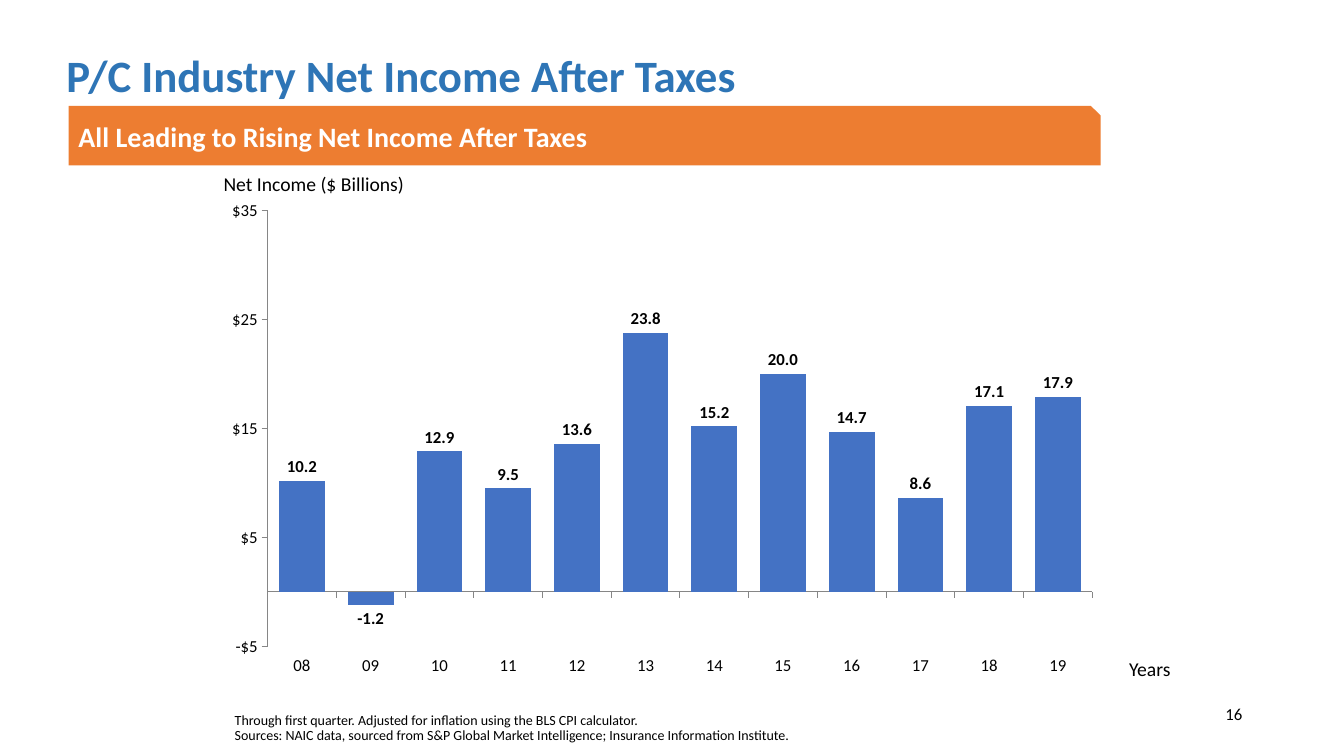
"""Build the slide on property and casualty industry net income after taxes."""
from typing import NamedTuple

from lxml.etree import SubElement
from pptx import Presentation
from pptx.chart.data import CategoryChartData
from pptx.dml.color import RGBColor
from pptx.enum.chart import XL_CHART_TYPE as ChartType
from pptx.enum.chart import XL_LABEL_POSITION as LabelPosition
from pptx.enum.chart import XL_TICK_LABEL_POSITION as TickLabels
from pptx.enum.chart import XL_TICK_MARK as TickMark
from pptx.enum.shapes import MSO_SHAPE as Preset
from pptx.enum.text import MSO_ANCHOR as Anchor
from pptx.enum.text import PP_ALIGN as Align
from pptx.oxml.ns import qn
from pptx.util import Inches, Pt

BLACK = RGBColor(0x00, 0x00, 0x00)
WHITE = RGBColor(0xFF, 0xFF, 0xFF)
TITLE_BLUE = RGBColor(0x2E, 0x75, 0xB6)
BAR_BLUE = RGBColor(0x44, 0x72, 0xC4)
ORANGE = RGBColor(0xED, 0x7D, 0x31)
AXIS_GRAY = RGBColor(0x86, 0x86, 0x86)

FONT = "Calibri"
SLIDE_WIDTH = Inches(13.33)
SLIDE_HEIGHT = Inches(7.5)
FIRST_YEAR = 8
NET_INCOME = (10.2, -1.2, 12.9, 9.5, 13.6, 23.8, 15.2, 20.0, 14.7, 8.6, 17.1, 17.9)
PLOT_SHARES = {"x": 0.05, "y": 0.02, "w": 0.92, "h": 0.87}


class Area(NamedTuple):
    """A rectangle in percent of the slide's width and height."""

    left: float
    top: float
    width: float
    height: float

    def place(self) -> tuple[int, int, int, int]:
        """Return the rectangle in slide units."""
        return (
            round(SLIDE_WIDTH * self.left / 100),
            round(SLIDE_HEIGHT * self.top / 100),
            round(SLIDE_WIDTH * self.width / 100),
            round(SLIDE_HEIGHT * self.height / 100),
        )


class Label(NamedTuple):
    """A piece of text with its area and format."""

    text: str
    area: Area
    size: int
    color: RGBColor = BLACK
    bold: bool = False
    anchor: Anchor = Anchor.MIDDLE
    align: Align = Align.LEFT
    margin: float = 0.05


TITLE = Label("P/C Industry Net Income After Taxes", Area(4.2, 3.33, 92.5, 13.87),
              32, TITLE_BLUE, bold=True)
BANNER = Label("All Leading to Rising Net Income After Taxes",
               Area(5.1, 14, 76.8, 7.87), 20, WHITE, bold=True)
CHART_AREA = Area(16.58, 26.53, 66.69, 66.27)
LABELS = (
    TITLE,
    Label("Through first quarter. Adjusted for inflation using the BLS CPI calculator.\n"
          "Sources: NAIC data, sourced from S&P Global Market Intelligence; "
          "Insurance Information Institute.",
          Area(16.73, 92.4, 69.4, 6), 10, anchor=Anchor.BOTTOM, margin=0),
    Label("Net Income ($ Billions)", Area(15.9, 22.4, 21.68, 4.13), 14),
    Label("16", Area(70.67, 92.67, 22.5, 5.33), 12, anchor=Anchor.TOP, align=Align.RIGHT),
    Label("Years", Area(83.27, 86.53, 8.63, 4.13), 14),
)


def write(shape, text: str, *, size: int, color: RGBColor, bold: bool,
          anchor: Anchor, align: Align, margin: float) -> None:
    """Fill a shape with formatted text, one paragraph per line."""
    frame = shape.text_frame
    frame.word_wrap = True
    frame.vertical_anchor = anchor
    frame.margin_left = frame.margin_right = Inches(0.1)
    frame.margin_top = frame.margin_bottom = Inches(margin)
    frame.text = text
    for para in frame.paragraphs:
        para.alignment = align
        para.line_spacing = 0.9
        for span in para.runs:
            span.font.name = FONT
            span.font.size = Pt(size)
            span.font.bold = bold
            span.font.color.rgb = color


def write_label(shape, label: Label) -> None:
    """Write a label into a shape."""
    write(shape, label.text, size=label.size, color=label.color, bold=label.bold,
          anchor=label.anchor, align=label.align, margin=label.margin)


def add_banner(page, label: Label) -> None:
    """Draw the orange banner with one snipped corner."""
    banner = page.shapes.add_shape(Preset.SNIP_1_RECTANGLE, *label.area.place())
    banner.shadow.inherit = False
    banner.fill.solid()
    banner.fill.fore_color.rgb = ORANGE
    banner.line.fill.background()
    write_label(banner, label)


def fix_plot_area(chart) -> None:
    """Set the inner plot area as shares of the chart's size."""
    plot_area = chart._chartSpace.chart.plotArea
    layout = plot_area.find(qn("c:layout"))
    if layout is None:
        layout = SubElement(plot_area, qn("c:layout"))
        plot_area.insert(0, layout)
    manual = SubElement(layout, qn("c:manualLayout"))
    settings = {"layoutTarget": "inner", "xMode": "edge", "yMode": "edge", **PLOT_SHARES}
    for name, value in settings.items():
        SubElement(manual, qn(f"c:{name}")).set("val", str(value))


def add_income_chart(page, area: Area) -> None:
    """Draw the column chart of net income by year."""
    data = CategoryChartData(number_format="0.0")
    data.categories = [f"{FIRST_YEAR + step:02d}" for step in range(len(NET_INCOME))]
    data.add_series("Net Income", NET_INCOME)
    chart = page.shapes.add_chart(ChartType.COLUMN_CLUSTERED, *area.place(), data).chart
    chart.has_legend = False
    chart.has_title = False
    chart.font.name = FONT
    chart.font.size = Pt(12)
    chart.font.color.rgb = BLACK
    fix_plot_area(chart)

    for axis in (chart.category_axis, chart.value_axis):
        axis.has_major_gridlines = False
        axis.major_tick_mark = TickMark.OUTSIDE
        axis.minor_tick_mark = TickMark.NONE
        axis.format.line.color.rgb = AXIS_GRAY
        axis.format.line.width = Pt(0.75)
    chart.category_axis.tick_label_position = TickLabels.LOW
    income_axis = chart.value_axis
    income_axis.minimum_scale = -5
    income_axis.maximum_scale = 35
    income_axis.major_unit = 10
    income_axis.tick_labels.number_format = '"$"#,##0'
    income_axis.tick_labels.number_format_is_linked = False

    plot = chart.plots[0]
    plot.gap_width = 50
    plot.vary_by_categories = False
    bars = plot.series[0]
    bars.invert_if_negative = False
    bars.format.fill.solid()
    bars.format.fill.fore_color.rgb = BAR_BLUE
    values = bars.data_labels
    values.show_value = True
    values.position = LabelPosition.OUTSIDE_END
    values.number_format = "0.0"
    values.number_format_is_linked = False
    values.font.name = FONT
    values.font.size = Pt(12)
    values.font.bold = True
    values.font.color.rgb = BLACK


def main() -> None:
    """Build and save the deck."""
    deck = Presentation()
    deck.slide_width = SLIDE_WIDTH
    deck.slide_height = SLIDE_HEIGHT
    page = deck.slides.add_slide(deck.slide_layouts[6])
    add_income_chart(page, CHART_AREA)
    add_banner(page, BANNER)
    for label in LABELS:
        write_label(page.shapes.add_textbox(*label.area.place()), label)
    deck.save("out.pptx")


if __name__ == "__main__":
    main()
